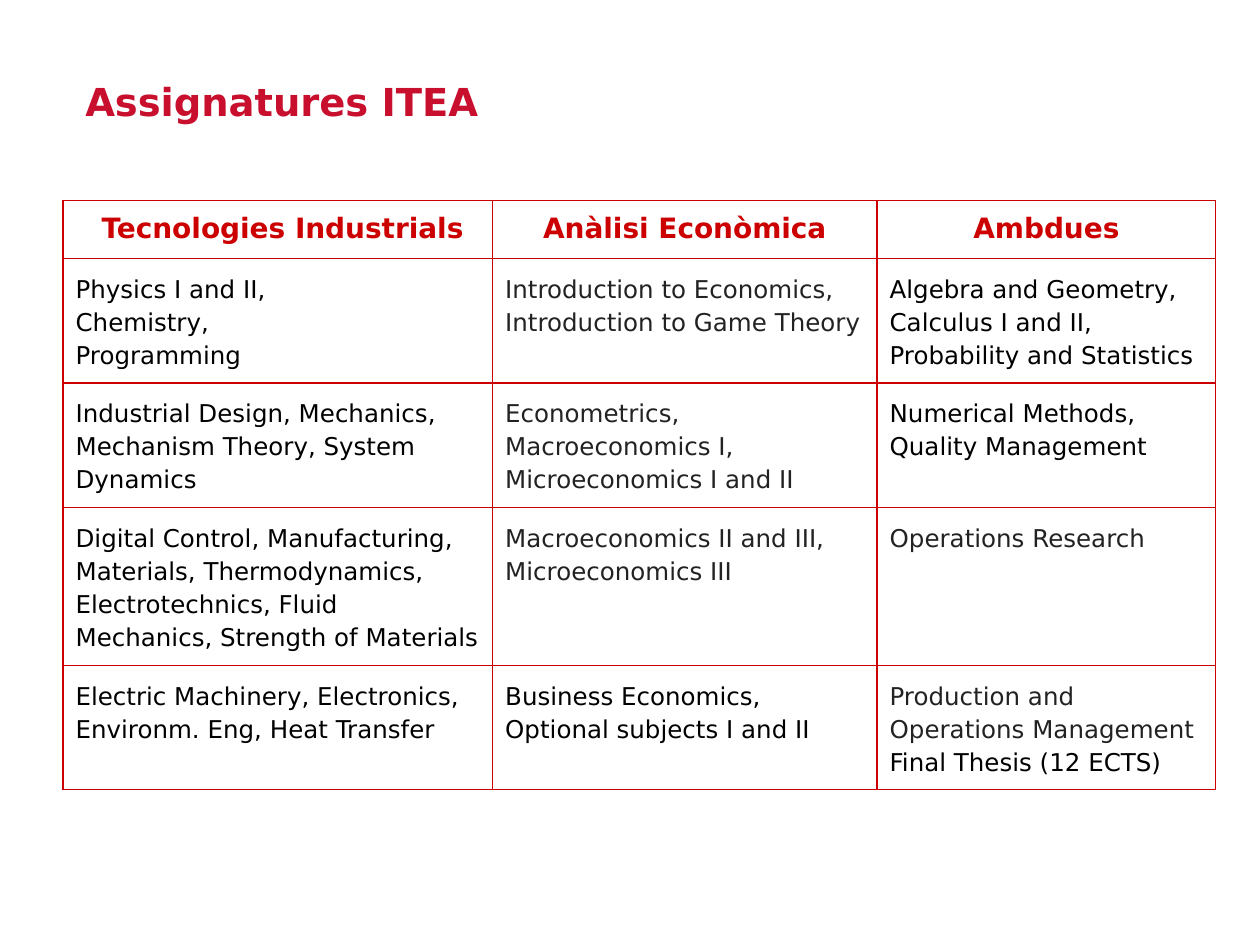
from lxml.etree import SubElement
from pptx import Presentation
from pptx.dml.color import RGBColor
from pptx.enum.text import MSO_ANCHOR, PP_ALIGN
from pptx.oxml.ns import qn
from pptx.util import Cm, Pt

HUES = {"title": "C8102E", "head": "CC0000", "rule": "CC0000",
        "ink": "000000", "grey": "222222"}
FONT = "DejaVu Sans"
PAD = Cm(0.254)
SIDES = ("margin_left", "margin_top", "margin_right", "margin_bottom")

TITLE = {"size": Pt(22), "bold": True, "name": FONT}
HEAD = {"size": Pt(16), "bold": True, "name": FONT}
BODY = {"size": Pt(14), "bold": False, "name": FONT}
MID = {"alignment": PP_ALIGN.CENTER}
LOOSE = {"alignment": PP_ALIGN.LEFT, "line_spacing": 1.15}

COLS = (8.66, 7.75, 6.83)
ROWS = (1.17, 2.5, 2.5, 3.18, 2.5)


def lines(hue, *texts):
    """Pair each line of text with its colour."""
    return [(hue, text) for text in texts]


HEADS = [lines("head", text) for text in
         (" Tecnologies Industrials", "Anàlisi Econòmica", "Ambdues")]
TERMS = [
    [lines("ink", "Physics I and II,", "Chemistry,", "Programming"),
     lines("grey", "Introduction to Economics,",
           "Introduction to Game Theory"),
     lines("ink", "Algebra and Geometry,", "Calculus I and II,",
           "Probability and Statistics")],
    [lines("ink", "Industrial Design, Mechanics, Mechanism Theory, "
           "System Dynamics"),
     lines("grey", "Econometrics,", "Macroeconomics I,",
           "Microeconomics I and II"),
     lines("ink", "Numerical Methods, Quality Management")],
    [lines("ink", "Digital Control, Manufacturing, Materials, "
           "Thermodynamics, Electrotechnics, Fluid Mechanics, "
           "Strength of Materials"),
     lines("grey", "Macroeconomics II and III,", "Microeconomics III"),
     lines("grey", "Operations Research")],
    [lines("ink", "Electric Machinery, Electronics, Environm. Eng, "
           "Heat Transfer"),
     lines("ink", "Business Economics, Optional subjects I and II"),
     lines("grey", "Production and Operations Management")
     + lines("ink", "Final Thesis (12 ECTS)")],
]


def apply(item, form):
    for key, value in form.items():
        setattr(item, key, value)


def write(frame, rows, font, para):
    """Fill a text frame, one paragraph for each line."""
    for i, (hue, text) in enumerate(rows):
        par = frame.add_paragraph() if i else frame.paragraphs[0]
        apply(par, para)
        run = par.add_run()
        run.text = text
        apply(run.font, font)
        run.font.color.rgb = RGBColor.from_string(HUES[hue])


def edge(cell):
    """Draw a thin rule on all four sides of a cell."""
    props = cell._tc.get_or_add_tcPr()
    for side in "LRTB":
        rule = SubElement(props, qn(f"a:ln{side}"), w=str(Pt(0.75)))
        fill = SubElement(rule, qn("a:solidFill"))
        SubElement(fill, qn("a:srgbClr"), val=HUES["rule"])


def add_title(slide):
    box = slide.shapes.add_textbox(Cm(1.47), Cm(1.57), Cm(20.47), Cm(1.73))
    frame = box.text_frame
    apply(frame, {"word_wrap": True, "vertical_anchor": MSO_ANCHOR.TOP,
                  **dict.fromkeys(SIDES, PAD), "margin_top": 0})
    write(frame, lines("title", "Assignatures ITEA"), TITLE, {})


def add_grid(slide):
    grid = slide.shapes.add_table(
        len(ROWS), len(COLS), Cm(1.27), Cm(4.04),
        Cm(sum(COLS)), Cm(sum(ROWS))).table
    apply(grid, {"first_row": False, "horz_banding": False})
    for col, width in zip(grid.columns, COLS):
        col.width = Cm(width)
    for row, height in zip(grid.rows, ROWS):
        row.height = Cm(height)
    for r, terms in enumerate([HEADS] + TERMS):
        font, para = (BODY, LOOSE) if r else (HEAD, MID)
        for c, rows in enumerate(terms):
            cell = grid.cell(r, c)
            apply(cell, dict.fromkeys(SIDES, PAD))
            edge(cell)
            cell.fill.background()
            write(cell.text_frame, rows, font, para)


def main():
    deck = Presentation()
    apply(deck, {"slide_width": Cm(25.4), "slide_height": Cm(19.05)})
    slide = deck.slides.add_slide(deck.slide_layouts[6])
    # Subject table
    add_grid(slide)
    # Heading
    add_title(slide)
    deck.save("out.pptx")


if __name__ == "__main__":
    main()
